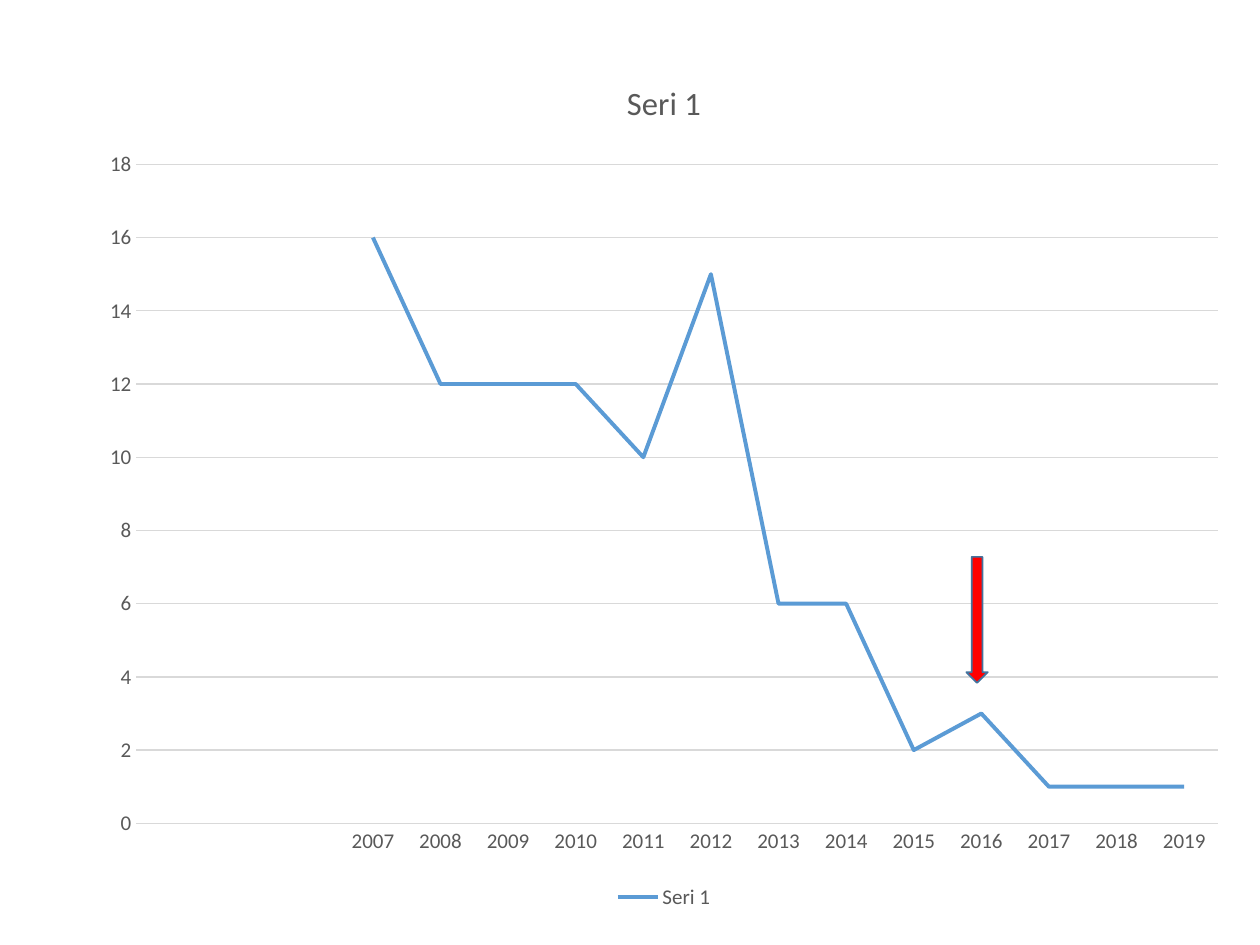
from pptx import Presentation
from pptx.chart.data import CategoryChartData
from pptx.dml.color import RGBColor
from pptx.enum.chart import XL_CHART_TYPE as ChartType, XL_LEGEND_POSITION as LegendPosition
from pptx.enum.chart import XL_MARKER_STYLE as MarkerStyle, XL_TICK_MARK as TickMark
from pptx.enum.shapes import MSO_SHAPE as Shape
from pptx.util import Inches, Pt

SERIES_NAME = "Seri 1"
LEADING_LABELS = [" ", "", ""]
YEARS = range(2007, 2020)
COUNTS = [16, 12, 12, 12, 10, 15, 6, 6, 2, 3, 1, 1, 1]
COLORS = {"text": "595959", "grid": "D9D9D9", "series": "5B9BD5",
          "arrow": "FF0000", "outline": "43739E"}
CHART_BOX = (0.69, 0.4, 9.16, 6.86)
ARROW_BOX = (7.67, 4.42, 0.17, 1)


def color(name):
    """Return the named colour."""
    return RGBColor.from_string(COLORS[name])


def style_font(font, size):
    """Apply the chart's text style."""
    font.name = "Calibri"
    font.size = Pt(size)
    font.bold = False
    font.color.rgb = color("text")


def style_line(line, name, width):
    """Apply a solid line."""
    line.color.rgb = color(name)
    line.width = Pt(width)


def add_line_chart(page):
    """Add the yearly line chart."""
    data = CategoryChartData()
    data.categories = LEADING_LABELS + [str(year) for year in YEARS]
    data.add_series(SERIES_NAME, [None] * len(LEADING_LABELS) + COUNTS)
    chart = page.shapes.add_chart(ChartType.LINE, *map(Inches, CHART_BOX), data).chart
    style_font(chart.font, 12)

    chart.has_title = True
    title = chart.chart_title.text_frame
    title.text = SERIES_NAME
    style_font(title.paragraphs[0].font, 18.6)
    chart.chart_title.include_in_layout = False

    chart.has_legend = True
    chart.legend.position = LegendPosition.BOTTOM
    chart.legend.include_in_layout = False
    style_font(chart.legend.font, 12)

    for axis in (chart.category_axis, chart.value_axis):
        axis.major_tick_mark = axis.minor_tick_mark = TickMark.NONE
        style_font(axis.tick_labels.font, 12)
    style_line(chart.category_axis.format.line, "grid", 0.75)
    values = chart.value_axis
    values.format.line.fill.background()
    values.minimum_scale, values.maximum_scale, values.major_unit = 0, 18, 2
    values.has_major_gridlines = True
    style_line(values.major_gridlines.format.line, "grid", 0.75)

    plot = chart.plots[0]
    plot.vary_by_categories = False
    series = plot.series[0]
    series.smooth = False
    series.marker.style = MarkerStyle.NONE
    style_line(series.format.line, "series", 2.25)


def add_arrow(page):
    """Add the arrow that points at 2016."""
    arrow = page.shapes.add_shape(Shape.DOWN_ARROW, *map(Inches, ARROW_BOX))
    arrow.shadow.inherit = False
    arrow.fill.solid()
    arrow.fill.fore_color.rgb = color("arrow")
    style_line(arrow.line, "outline", 1)


def main():
    """Build the slide."""
    deck = Presentation()
    deck.slide_width, deck.slide_height = Inches(10), Inches(7.5)
    page = deck.slides.add_slide(deck.slide_layouts[6])
    add_line_chart(page)
    add_arrow(page)
    deck.save("out.pptx")


if __name__ == "__main__":
    main()
